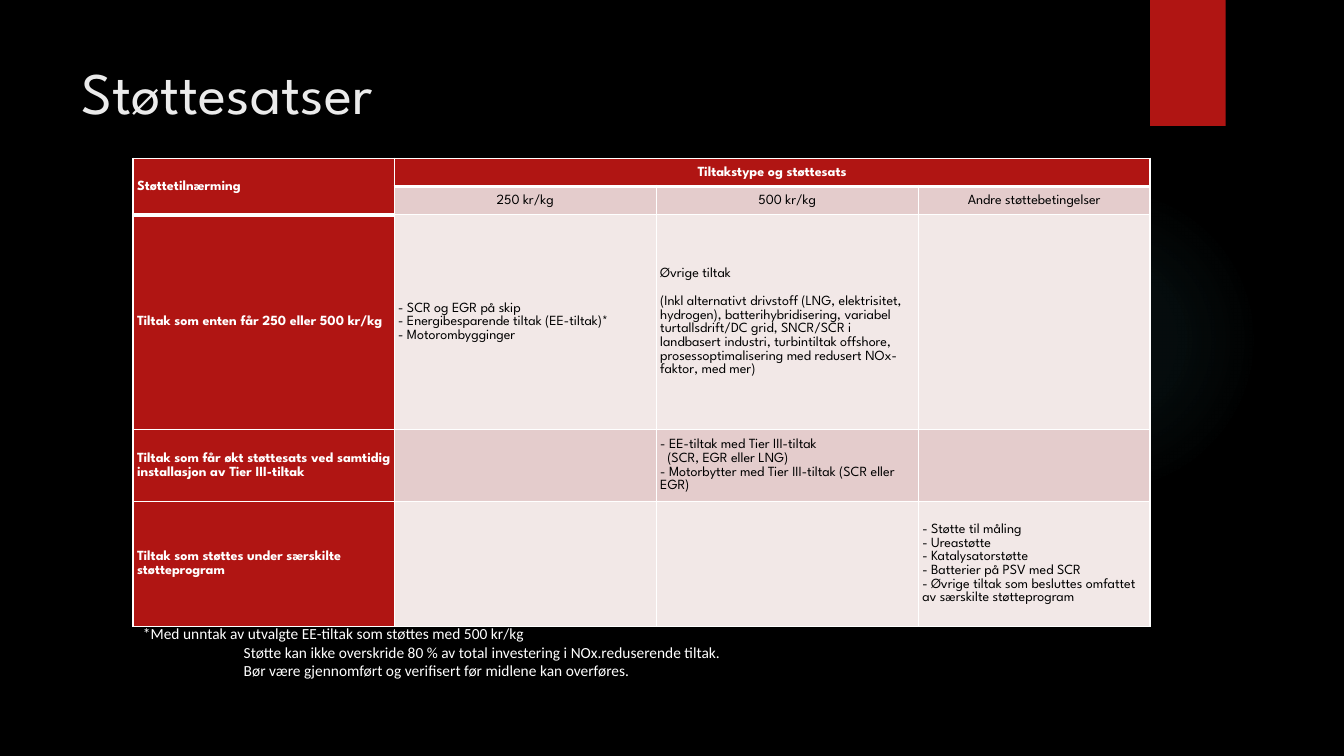
import lxml.etree
import pptx
import pptx.dml.color
import pptx.enum.shapes
import pptx.enum.text
import pptx.oxml
import pptx.oxml.ns
import pptx.util

GRID_COLUMNS, GRID_ROWS = 133.33, 75
SLIDE_WIDTH, SLIDE_HEIGHT = pptx.util.Inches(13.33), pptx.util.Inches(7.5)
RED, ROSE, PALE, WHITE, BLACK = "B01513", "E4CCCC", "F2E8E7", "FFFFFF", "000000"
GLOW = "50B9C1"
HEADING_FONT, NOTE_FONT = "League Spartan", "Calibri"
LEFT = pptx.enum.text.PP_ALIGN.LEFT
CENTER = pptx.enum.text.PP_ALIGN.CENTER
MIDDLE = pptx.enum.text.MSO_ANCHOR.MIDDLE
TOP = pptx.enum.text.MSO_ANCHOR.TOP

COLUMN_WIDTHS = [25.9, 26, 26, 23]
ROW_HEIGHTS = [2.8, 2.8, 21.3, 7.1, 12.4]
CELL_LINES = [
    [["Støttetilnærming"], ["Tiltakstype og støttesats"], [], []],
    [[], ["250 kr/kg"], ["500 kr/kg"], ["Andre støttebetingelser"]],
    [
        ["Tiltak som enten får 250 eller 500 kr/kg"],
        ["- SCR og EGR på skip", "- Energibesparende tiltak (EE-tiltak)*", "- Motorombygginger"],
        [
            "Øvrige tiltak",
            "(Inkl alternativt drivstoff (LNG, elektrisitet, hydrogen), batterihybridisering, "
            "variabel turtallsdrift/DC grid, SNCR/SCR i landbasert industri, turbintiltak offshore, "
            "prosessoptimalisering med redusert NOx-faktor, med mer)",
        ],
        [],
    ],
    [
        ["Tiltak som får økt støttesats ved samtidig installasjon av Tier III-tiltak"],
        [],
        [
            "- EE-tiltak med Tier III-tiltak",
            "(SCR, EGR eller LNG)",
            "- Motorbytter med Tier III-tiltak (SCR eller EGR)",
        ],
        [],
    ],
    [
        ["Tiltak som støttes under særskilte støtteprogram"],
        [],
        [],
        [
            "- Støtte til måling",
            "- Ureastøtte",
            "- Katalysatorstøtte",
            "- Batterier på PSV med SCR",
            "- Øvrige tiltak som besluttes omfattet av særskilte støtteprogram",
        ],
    ],
]
FOOTNOTES = [
    "*Med unntak av utvalgte EE-tiltak som støttes med 500 kr/kg",
    "Støtte kan ikke overskride 80 % av total investering i NOx.reduserende tiltak.",
    "Bør være gjennomført og verifisert før midlene kan overføres.",
]


def color(value):
    return pptx.dml.color.RGBColor.from_string(value)


def across(columns):
    return round(SLIDE_WIDTH * columns / GRID_COLUMNS)


def down(rows):
    return round(SLIDE_HEIGHT * rows / GRID_ROWS)


def area(left, top, width, height):
    return across(left), down(top), across(width), down(height)


def write_lines(frame, lines, font_name, size, text_color, bold=False, align=LEFT, spacing=1.0):
    frame.text = "\n".join(lines)
    for para in frame.paragraphs:
        para.alignment = align
        para.line_spacing = spacing
        para.font.name = font_name
        para.font.size = pptx.util.Pt(size)
        para.font.bold = bold
        para.font.color.rgb = color(text_color)


def indent(para, columns):
    properties = para._p.get_or_add_pPr()
    properties.set("marL", str(across(columns)))
    properties.set("indent", "0")


def add_text(page, place, lines, font_name, size, anchor):
    box = page.shapes.add_textbox(*place)
    frame = box.text_frame
    frame.word_wrap = True
    frame.vertical_anchor = anchor
    return box, frame


def add_plain_shape(page, kind, place, fill):
    shape = page.shapes.add_shape(kind, *place)
    shape.shadow.inherit = False
    shape.line.fill.background()
    shape.fill.solid()
    shape.fill.fore_color.rgb = color(fill)
    return shape


def add_glow(page, place, stops):
    glow = add_plain_shape(page, pptx.enum.shapes.MSO_SHAPE.OVAL, place, GLOW)
    stop_xml = "".join(
        f'<a:gs pos="{position * 1000}"><a:srgbClr val="{GLOW}">'
        f'<a:alpha val="{alpha * 1000}"/></a:srgbClr></a:gs>'
        for position, alpha in stops
    )
    gradient = pptx.oxml.parse_xml(
        f'<a:gradFill {pptx.oxml.ns.nsdecls("a")}><a:gsLst>{stop_xml}</a:gsLst>'
        '<a:path path="circle"><a:fillToRect l="50000" t="50000" r="50000" b="50000"/></a:path>'
        "</a:gradFill>"
    )
    properties = glow._element.spPr
    solid = properties.find(pptx.oxml.ns.qn("a:solidFill"))
    properties.replace(solid, gradient)


def add_borders(cell, bottom_width):
    properties = cell._tc.get_or_add_tcPr()
    for side, width in (("L", 1), ("R", 1), ("T", 1), ("B", bottom_width)):
        line = lxml.etree.SubElement(
            properties, pptx.oxml.ns.qn(f"a:ln{side}"), w=str(pptx.util.Pt(width))
        )
        fill = lxml.etree.SubElement(line, pptx.oxml.ns.qn("a:solidFill"))
        lxml.etree.SubElement(fill, pptx.oxml.ns.qn("a:srgbClr"), val=WHITE)


def style_cell(cell, row, column, lines):
    heading = row == 0 or column == 0
    align = CENTER if row < 2 and column > 0 else LEFT
    write_lines(
        cell.text_frame, lines, HEADING_FONT, 10, WHITE if heading else BLACK, heading, align, 1.07
    )
    cell.vertical_anchor = MIDDLE
    cell.margin_left = cell.margin_right = across(0.4)
    cell.margin_top = cell.margin_bottom = 0
    add_borders(cell, 3 if row == 0 or (row, column) == (1, 0) else 1)
    cell.fill.solid()
    cell.fill.fore_color.rgb = color(RED if heading else ROSE if row % 2 else PALE)


def add_rate_table(page):
    place = area(13.2, 15.7, sum(COLUMN_WIDTHS), sum(ROW_HEIGHTS))
    table = page.shapes.add_table(len(ROW_HEIGHTS), len(COLUMN_WIDTHS), *place).table
    for column, width in zip(table.columns, COLUMN_WIDTHS):
        column.width = across(width)
    for row, height in zip(table.rows, ROW_HEIGHTS):
        row.height = down(height)
    for row, row_lines in enumerate(CELL_LINES):
        for column, lines in enumerate(row_lines):
            style_cell(table.cell(row, column), row, column, lines)
    table.cell(0, 0).merge(table.cell(1, 0))
    table.cell(0, 1).merge(table.cell(0, 3))
    table.cell(2, 2).text_frame.paragraphs[1].space_before = pptx.util.Pt(10)
    indent(table.cell(3, 2).text_frame.paragraphs[1], 0.7)


def add_title(page):
    box, frame = add_text(page, area(7.1, 5, 102.9, 15.3), [], HEADING_FONT, 42, TOP)
    write_lines(frame, ["Støttesatser"], HEADING_FONT, 42, "EBEBEB")


def add_footnotes(page):
    box, frame = add_text(page, area(13.2, 61.4, 60.1, 6.6), [], NOTE_FONT, 11, MIDDLE)
    write_lines(frame, FOOTNOTES, NOTE_FONT, 11, WHITE)
    for para in frame.paragraphs[1:]:
        indent(para, 10)


def main():
    deck = pptx.Presentation()
    deck.slide_width, deck.slide_height = SLIDE_WIDTH, SLIDE_HEIGHT
    page = deck.slides.add_slide(deck.slide_layouts[6])
    page.background.fill.solid()
    page.background.fill.fore_color.rgb = color(BLACK)
    add_glow(page, area(94.1, 18.3, 30.8, 30.8), [(0, 7), (36, 6), (69, 0)])
    add_plain_shape(page, pptx.enum.shapes.MSO_SHAPE.RECTANGLE, area(114.1, 0, 7.5, 12.5), RED)
    add_title(page)
    add_rate_table(page)
    add_footnotes(page)
    deck.save("out.pptx")


if __name__ == "__main__":
    main()
